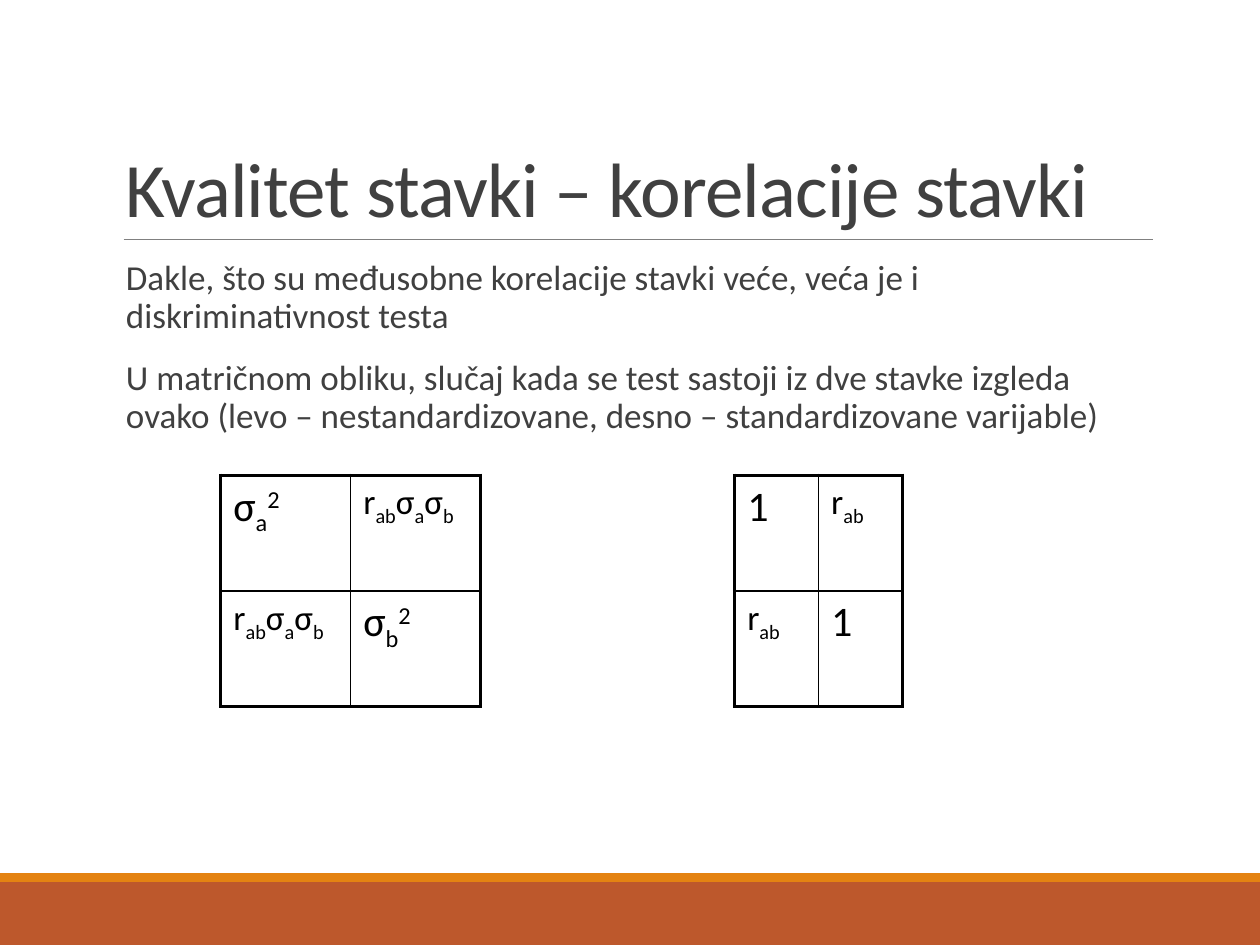
from dataclasses import dataclass

from lxml import etree
from pptx import Presentation
from pptx import util as u
from pptx.dml.color import RGBColor
from pptx.enum import shapes, text
from pptx.oxml import ns


@dataclass(frozen=True)
class Theme:
    font: str = "Calibri"
    ink: str = "404040"
    black: str = "000000"
    rule: str = "808080"
    rust: str = "BD582C"
    orange: str = "E48312"
    title: int = 44
    body: int = 20
    large: int = 24
    outer: float = 2.25
    inner: float = 1


theme = Theme()


def add_span(para, words, size, color, baseline=0):
    span = para.add_run()
    span.text = words
    span.font.name = theme.font
    span.font.size = u.Pt(size)
    span.font.color.rgb = RGBColor.from_string(color)
    if baseline:
        span.font._element.set("baseline", str(baseline * 1000))
    return span


def add_border(cell, side, width):
    line = etree.SubElement(cell._tc.get_or_add_tcPr(), ns.qn("a:ln" + side),
                            w=str(u.Pt(width)))
    fill = etree.SubElement(line, ns.qn("a:solidFill"))
    etree.SubElement(fill, ns.qn("a:srgbClr"), val=theme.black)


deck = Presentation()
deck.slide_width, deck.slide_height = u.Cm(25.4), u.Cm(19.05)
page = deck.slides.add_slide(deck.slide_layouts[6])

# Footer bands
for top, height, color in ((17.78, 1.27, theme.rust), (17.6, 0.18, theme.orange)):
    band = page.shapes.add_shape(shapes.MSO_SHAPE.RECTANGLE, 0, u.Cm(top),
                                 deck.slide_width, u.Cm(height))
    band.shadow.inherit = False
    band.fill.solid()
    band.fill.fore_color.rgb = RGBColor.from_string(color)
    band.line.fill.background()

# Rule under the title
rule = page.shapes.add_connector(shapes.MSO_CONNECTOR.STRAIGHT, u.Cm(2.49),
                                 u.Cm(4.83), u.Cm(23.24), u.Cm(4.83))
rule.line.color.rgb = RGBColor.from_string(theme.rule)
rule.line.width = u.Pt(0.5)
etree.SubElement(rule._element.spPr, ns.qn("a:effectLst"))

# Title
box = page.shapes.add_textbox(u.Cm(2.29), u.Cm(0.79), u.Cm(20.96), u.Cm(4.04))
box.text_frame.word_wrap = True
box.text_frame.vertical_anchor = text.MSO_ANCHOR.BOTTOM
para = box.text_frame.paragraphs[0]
para.line_spacing = 0.85
span = add_span(para, "Kvalitet stavki – korelacije stavki", theme.title, theme.ink)
span.font._element.set("spc", "-50")

# Body text
box = page.shapes.add_textbox(u.Cm(2.29), u.Cm(5.13), u.Cm(20.96), u.Cm(11.18))
frame = box.text_frame
frame.word_wrap = True
frame.margin_left, frame.margin_right = u.Cm(0.25), 0
statements = (
    "Dakle, što su međusobne korelacije stavki veće, veća je i "
    "diskriminativnost testa",
    "U matričnom obliku, slučaj kada se test sastoji iz dve stavke izgleda "
    "ovako (levo – nestandardizovane, desno – standardizovane varijable)",
)
for index, statement in enumerate(statements):
    para = frame.add_paragraph() if index else frame.paragraphs[0]
    para.line_spacing = 0.9
    para.space_before, para.space_after = u.Pt(12), u.Pt(2)
    add_span(para, statement, theme.body, theme.ink)

# Matrices: each cell is a row of (symbol, baseline shift in percent)
SUB, SUP = -25, 30
correlation = [("r", 0), ("ab", SUB)]
covariance = correlation + [("σ", 0), ("a", SUB), ("σ", 0), ("b", SUB)]
variance_a = [("σ", 0), ("a", SUB), ("2", SUP)]
variance_b = [("σ", 0), ("b", SUB), ("2", SUP)]
one = [("1", 0)]
matrices = (
    (4.45, 5.24, ((variance_a, covariance), (covariance, variance_b))),
    (14.81, 3.38, ((one, correlation), (correlation, one))),
)
for left, width, matrix in matrices:
    table = page.shapes.add_table(2, 2, u.Cm(left), u.Cm(9.58),
                                  u.Cm(width), u.Cm(4.66)).table
    table.first_row = table.horz_banding = False
    for row, formulas in enumerate(matrix):
        for col, formula in enumerate(formulas):
            cell = table.cell(row, col)
            size = theme.large if row == col else theme.body
            para = cell.text_frame.paragraphs[0]
            para.space_before = u.Pt(size * 0.2)
            for symbol, baseline in formula:
                add_span(para, symbol, size, theme.black, baseline)
            outside = {"L": col == 0, "R": col == 1, "T": row == 0, "B": row == 1}
            for side, is_outer in outside.items():
                add_border(cell, side, theme.outer if is_outer else theme.inner)
            cell.fill.background()

deck.save("out.pptx")
